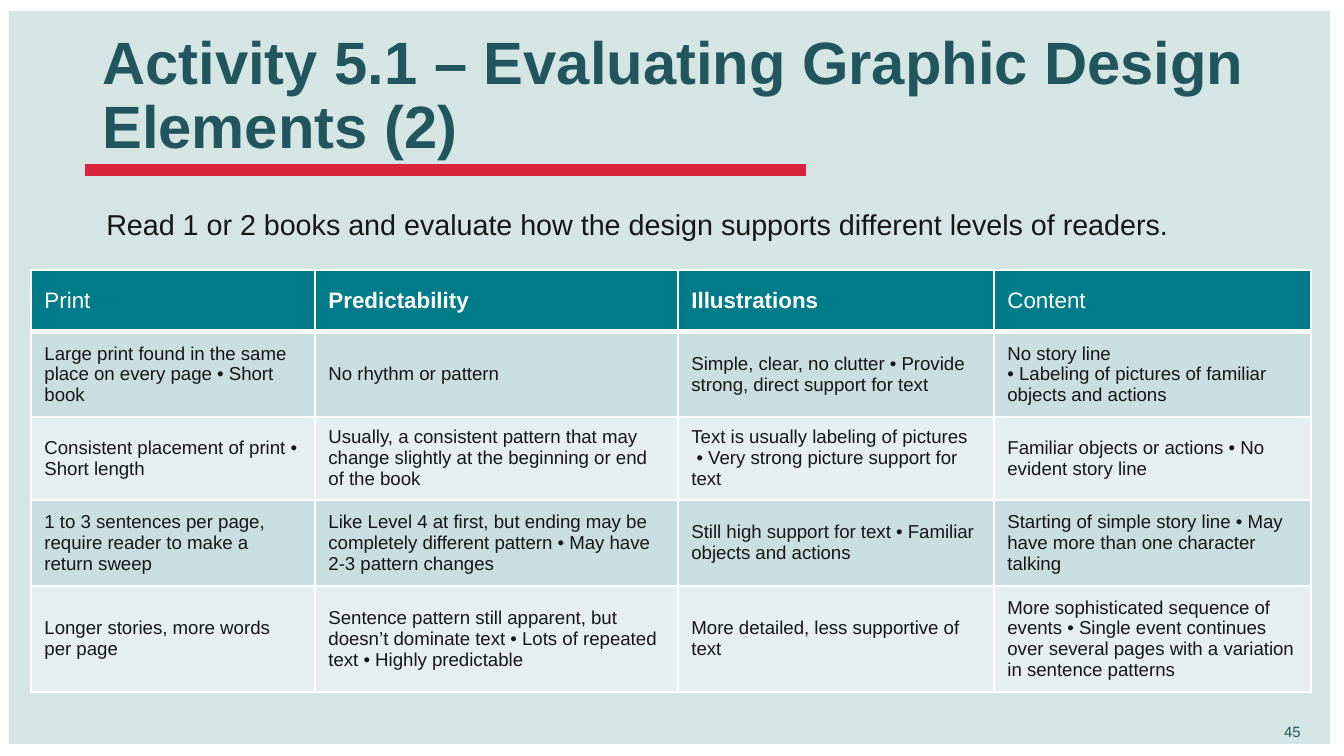
from lxml import etree
from pptx import Presentation
from pptx.dml.color import RGBColor
from pptx.enum.shapes import MSO_CONNECTOR, MSO_SHAPE
from pptx.enum.text import MSO_ANCHOR
from pptx.oxml import parse_xml
from pptx.oxml.ns import nsdecls, qn
from pptx.util import Pt

SCALE = 914400 / 134.4
STRAIGHT = MSO_CONNECTOR.STRAIGHT
RECTANGLE = MSO_SHAPE.RECTANGLE
TOP, MIDDLE = MSO_ANCHOR.TOP, MSO_ANCHOR.MIDDLE
WHITE = RGBColor(0xFF, 0xFF, 0xFF)
SAGE = RGBColor(0xAA, 0xCC, 0xC9)
RED = RGBColor(0xD8, 0x25, 0x3D)
DARK_TEAL = RGBColor(0x21, 0x56, 0x5E)
INK = RGBColor(0x17, 0x16, 0x16)
TEAL = RGBColor(0x00, 0x7B, 0x89)
BANDS = [RGBColor(0xCA, 0xDD, 0xE1), RGBColor(0xE6, 0xEF, 0xF0)]

COLUMN_WIDTHS = [284, 363, 316, 317]
ROW_HEIGHTS = [62, 85, 83, 86, 106]
BOLD_HEADINGS = ["Predictability", "Illustrations"]
ROWS = [
    ["Print", "Predictability", "Illustrations", "Content"],
    ["Large print found in the same place on every page • Short book",
     "No rhythm or pattern",
     "Simple, clear, no clutter • Provide strong, direct support for text",
     "No story line\n• Labeling of pictures of familiar objects and actions"],
    ["Consistent placement of print • Short length",
     "Usually, a consistent pattern that may change slightly at the beginning or end of the book",
     "Text is usually labeling of pictures    • Very strong picture support for text",
     "Familiar objects or actions • No evident story line"],
    ["1 to 3 sentences per page, require reader to make a return sweep",
     "Like Level 4 at first, but ending may be completely different pattern • May have 2-3 pattern changes",
     "Still high support for text • Familiar objects and actions",
     "Starting of simple story line • May have more than one character talking"],
    ["Longer stories, more words per page",
     "Sentence pattern still apparent, but doesn’t dominate text • Lots of repeated text • Highly predictable",
     "More detailed, less supportive of text",
     "More sophisticated sequence of events • Single event continues over several pages with a variation in sentence patterns"],
]


def px(length):
    return round(length * SCALE)


def write(frame, text, size, color, bold=False, spacing=1.0):
    frame.word_wrap = True
    frame.text = text
    for para in frame.paragraphs:
        para.line_spacing = spacing
        para.font.name = "Arial"
        para.font.size = Pt(size)
        para.font.bold = bold
        para.font.color.rgb = color


deck = Presentation()
deck.slide_width, deck.slide_height = px(1344), px(756)
page = deck.slides.add_slide(deck.slide_layouts[6])

panel = page.shapes.add_shape(RECTANGLE, px(9), px(11), px(1321), px(733))
panel.shadow.inherit = False
panel.fill.solid()
panel.fill.fore_color.rgb = SAGE
panel.line.fill.background()
panel_color = panel.fill._xPr.find(".//" + qn("a:srgbClr"))
etree.SubElement(panel_color, qn("a:alpha"), val="50000")

rule = page.shapes.add_connector(STRAIGHT, px(85), px(170), px(806), px(170))
rule.line.color.rgb = RED
rule.line.width = Pt(6.5)
etree.SubElement(rule._element.spPr, qn("a:effectLst"))

for text, left, top, width, height, anchor, size, color, bold, spacing in [
    ("Activity 5.1 – Evaluating Graphic Design Elements (2)",
     89, 24, 1221, 146, MIDDLE, 32, DARK_TEAL, True, 0.9),
    ("Read 1 or 2 books and evaluate how the design supports different levels of readers.",
     93, 202, 1158, 48, TOP, 15.4, INK, False, 0.98),
    ("45", 1271, 716, 47, 32, TOP, 8, DARK_TEAL, False, 1.0),
]:
    box = page.shapes.add_textbox(px(left), px(top), px(width), px(height))
    box.text_frame.vertical_anchor = anchor
    write(box.text_frame, text, size, color, bold, spacing)

table = page.shapes.add_table(
    len(ROWS), len(COLUMN_WIDTHS), px(31), px(270),
    px(sum(COLUMN_WIDTHS)), px(sum(ROW_HEIGHTS))).table
for column, width in zip(table.columns, COLUMN_WIDTHS):
    column.width = px(width)

for row_index, (row, height) in enumerate(zip(ROWS, ROW_HEIGHTS)):
    table.rows[row_index].height = px(height)
    header = row_index == 0
    for column_index, text in enumerate(row):
        cell = table.cell(row_index, column_index)
        cell.vertical_anchor = MIDDLE
        write(cell.text_frame, text, 12 if header else 10,
              WHITE if header else INK, text in BOLD_HEADINGS)
        for side in "LRTB":
            thick = (row_index, side) in [(0, "B"), (1, "T")]
            cell._tc.get_or_add_tcPr().append(parse_xml(
                f'<a:ln{side} {nsdecls("a")} w="{Pt(3 if thick else 1)}">'
                f'<a:solidFill><a:srgbClr val="{WHITE}"/></a:solidFill></a:ln{side}>'))
        cell.fill.solid()
        cell.fill.fore_color.rgb = TEAL if header else BANDS[(row_index - 1) % 2]

deck.save("out.pptx")
